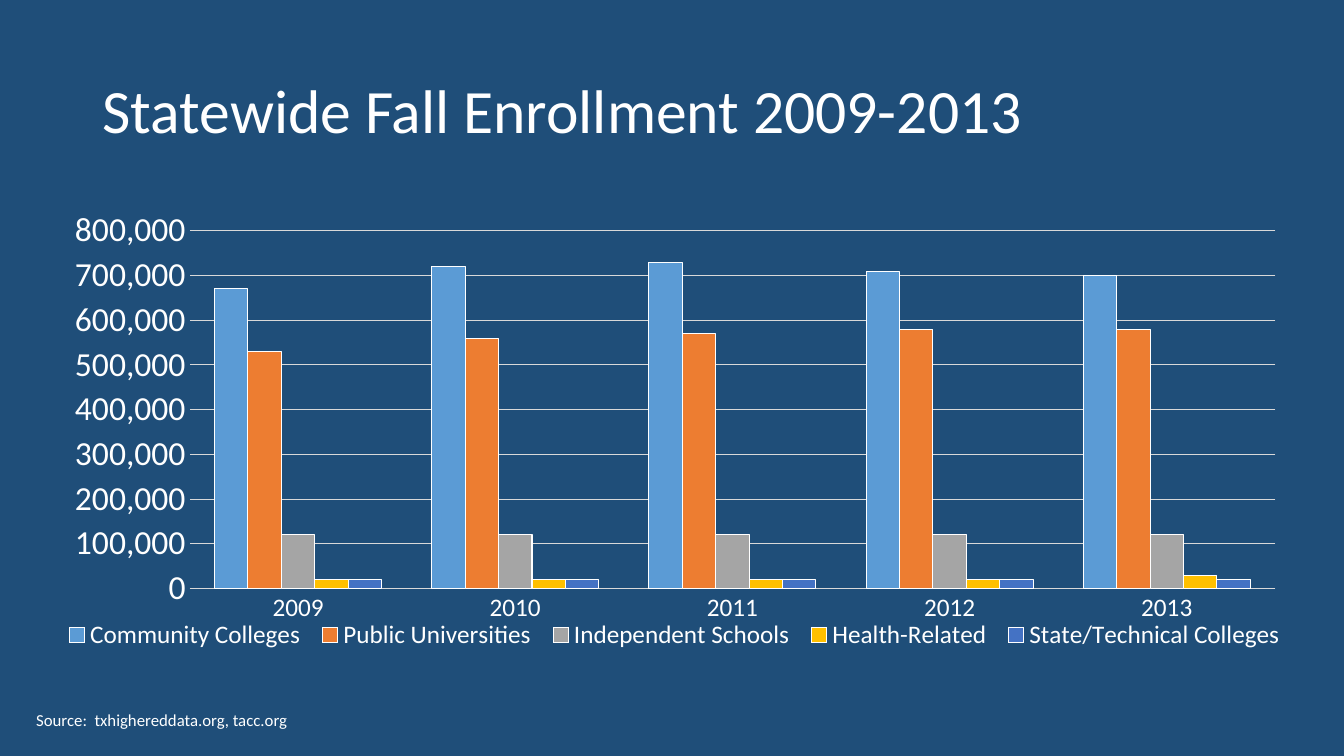
from lxml.etree import SubElement
from pptx import Presentation
from pptx.chart.data import CategoryChartData
from pptx.dml.color import RGBColor
from pptx.enum.chart import XL_CHART_TYPE, XL_LEGEND_POSITION, XL_TICK_MARK
from pptx.enum.text import MSO_ANCHOR
from pptx.oxml.ns import qn
from pptx.util import Inches, Pt

FONT = "Calibri"
COLORS = {"back": "1F4E79", "text": "FFFFFF", "grid": "D9D9D9"}
YEARS = ["2009", "2010", "2011", "2012", "2013"]
# Name, bar colour, students in thousands for each year
SECTORS = [
    ("Community Colleges", "5B9BD5", [670, 720, 730, 710, 700]),
    ("Public Universities", "ED7D31", [530, 560, 570, 580, 580]),
    ("Independent Schools", "A5A5A5", [120, 120, 120, 120, 120]),
    ("Health-Related", "FFC000", [20, 20, 20, 20, 30]),
    ("State/Technical Colleges", "4472C4", [20, 20, 20, 20, 20]),
]


def rgb(name):
    return RGBColor.from_string(COLORS.get(name, name))


def style_font(font, size):
    font.name, font.size = FONT, Pt(size)
    font.color.rgb = rgb("text")


def style_line(line, color):
    line.color.rgb = rgb(color)
    line.width = Pt(0.75)


def add_text(slide, box, text, size=12, anchor=MSO_ANCHOR.TOP, spacing=1.0):
    frame = slide.shapes.add_textbox(*map(Inches, box)).text_frame
    frame.word_wrap = True
    frame.vertical_anchor = anchor
    par = frame.paragraphs[0]
    par.line_spacing = spacing
    run = par.add_run()
    run.text = text
    style_font(run.font, size)


def place_part(part, box, area, inner=False):
    """Pin a chart part to an area, in inches from the corner of the chart box."""
    for old in part.findall(qn("c:layout")):
        part.remove(old)
    layout = SubElement(part, qn("c:layout"))
    # The layout comes first in a plot area, and after the position in a legend
    part.insert(0 if inner else 1, layout)
    manual = SubElement(layout, qn("c:manualLayout"))
    _, _, width, height = box
    left, top, wide, high = area
    rules = [("layoutTarget", "inner")] if inner else []
    rules += [("xMode", "edge"), ("yMode", "edge"),
              ("x", left / width), ("y", top / height),
              ("w", wide / width), ("h", high / height)]
    for tag, value in rules:
        SubElement(manual, qn(f"c:{tag}")).set("val", str(value))


def add_bars(slide, box):
    data = CategoryChartData(number_format="#,##0")
    data.categories = YEARS
    for name, _, counts in SECTORS:
        data.add_series(name, [count * 1000 for count in counts])
    chart = slide.shapes.add_chart(
        XL_CHART_TYPE.COLUMN_CLUSTERED, *map(Inches, box), data).chart
    chart.has_title = False
    style_font(chart.font, 24)

    plot = chart.plots[0]
    plot.gap_width, plot.overlap = 150, 0
    plot.vary_by_categories = False
    for series, (_, color, _) in zip(plot.series, SECTORS):
        series.format.fill.solid()
        series.format.fill.fore_color.rgb = rgb(color)
        style_line(series.format.line, "text")

    for axis, size in ((chart.category_axis, 18), (chart.value_axis, 24)):
        axis.major_tick_mark = axis.minor_tick_mark = XL_TICK_MARK.NONE
        style_font(axis.tick_labels.font, size)
    style_line(chart.category_axis.format.line, "grid")

    scale = chart.value_axis
    scale.minimum_scale, scale.maximum_scale = 0, 800000
    scale.major_unit = 100000
    scale.tick_labels.number_format = "#,##0"
    scale.tick_labels.number_format_is_linked = False
    scale.format.line.fill.background()
    style_line(scale.major_gridlines.format.line, "grid")

    chart.has_legend = True
    legend = chart.legend
    legend.position = XL_LEGEND_POSITION.BOTTOM
    legend.include_in_layout = False
    style_font(legend.font, 18)

    root = chart.element
    place_part(root.find(f".//{qn('c:plotArea')}"), box,
               (1.39, 0.29, 10.77, 3.55), inner=True)
    place_part(root.find(f".//{qn('c:legend')}"), box,
               (0.06, 4.12, 12.28, 0.36))


def add_title(slide, box, text):
    add_text(slide, box, text, size=44, anchor=MSO_ANCHOR.MIDDLE, spacing=0.9)


def main():
    deck = Presentation()
    deck.slide_width, deck.slide_height = Inches(13.33), Inches(7.5)
    slide = deck.slides.add_slide(deck.slide_layouts[6])
    slide.background.fill.solid()
    slide.background.fill.fore_color.rgb = rgb("back")
    add_title(slide, (0.92, 0.4, 11.5, 1.45),
              "Statewide Fall Enrollment 2009-2013")
    add_bars(slide, (0.49, 2, 12.4, 4.76))
    add_text(slide, (0.26, 6.99, 5.19, 0.3),
             "Source:  txhighereddata.org, tacc.org")
    deck.save("out.pptx")


if __name__ == "__main__":
    main()
